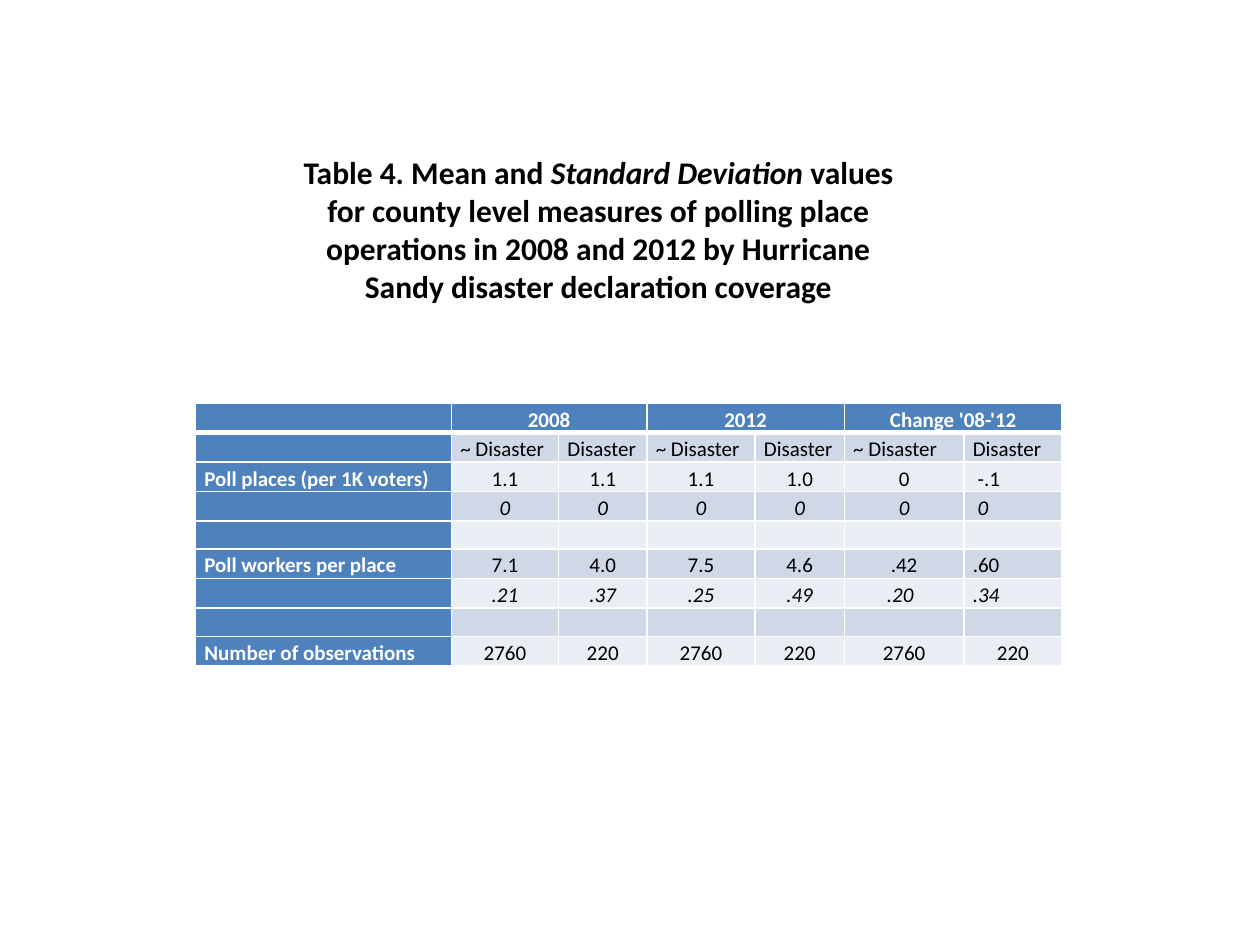
from dataclasses import dataclass

from lxml.etree import SubElement
from pptx import Presentation
from pptx.dml.color import RGBColor
from pptx.enum.text import MSO_ANCHOR as Anchor, MSO_AUTO_SIZE as AutoSize, PP_ALIGN as Align
from pptx.oxml.ns import qn
from pptx.util import Cm, Pt


@dataclass(frozen=True)
class Theme:
    font: str = "Calibri"
    title_size: int = 18
    table_size: int = 12
    ink: str = "000000"
    paper: str = "FFFFFF"
    accent: str = "4F81BD"
    bands: tuple = ("E9EDF4", "D0D8E8")
    rule: int = 1
    heavy_rule: int = 3


THEME = Theme()

TITLE = (
    ("Table 4. Mean and ", False),
    ("Standard Deviation", True),
    (" values for county level measures of polling place operations in 2008 "
     "and 2012 by Hurricane Sandy disaster declaration coverage", False),
)
ROWS = (
    ("", "2008", "", "2012", "", "Change '08-'12", ""),
    ("",) + ("~ Disaster", "Disaster") * 3,
    ("Poll places (per 1K voters)", "1.1", "1.1", "1.1", "1.0", "0", "-.1"),
    ("", "0", "0", "0", "0", "0", "0"),
    ("",) * 7,
    ("Poll workers per place", "7.1", "4.0", "7.5", "4.6", ".42", ".60"),
    ("", ".21", ".37", ".25", ".49", ".20", ".34"),
    ("",) * 7,
    ("Number of observations",) + ("2760", "220") * 3,
)
COLUMN_WIDTHS = (5.16, 2.16, 1.78, 2.18, 1.8, 2.41, 1.98)
ROW_HEIGHTS = (0.56,) * 6 + (0.58,) * 3
HEADER, SUBHEADER = 0, 1
DEVIATION_ROWS = (3, 6)
# Left-aligned figures and their indents in cm, by (row, column)
INDENTS = {(2, 6): 0.1, (3, 6): 0.1, (5, 6): 0, (6, 5): 0.68, (6, 6): 0}


def apply(target, **values):
    for name, value in values.items():
        setattr(target, name, value)


def add_run(paragraph, text, size, color, bold, italic):
    run = paragraph.add_run()
    run.text = text
    apply(run.font, name=THEME.font, size=Pt(size), bold=bold, italic=italic)
    run.font.color.rgb = RGBColor.from_string(color)


def add_title(slide, left, top, width, height):
    frame = slide.shapes.add_textbox(Cm(left), Cm(top), Cm(width), Cm(height)).text_frame
    apply(frame, word_wrap=True, auto_size=AutoSize.SHAPE_TO_FIT_TEXT)
    paragraph = frame.paragraphs[0]
    paragraph.alignment = Align.CENTER
    for text, italic in TITLE:
        add_run(paragraph, text, THEME.title_size, THEME.ink, True, italic)


def draw_borders(cell, row):
    """Rule all four sides, with a heavy rule between header and subheader."""
    properties = cell._tc.get_or_add_tcPr()
    heavy_side = {HEADER: "B", SUBHEADER: "T"}.get(row)
    for side in "LRTB":
        weight = THEME.heavy_rule if side == heavy_side else THEME.rule
        line = SubElement(properties, qn(f"a:ln{side}"), w=str(Pt(weight)))
        fill = SubElement(line, qn("a:solidFill"))
        SubElement(fill, qn("a:srgbClr"), val=THEME.paper)


def write_cell(cell, row, column, text):
    accented = row == HEADER or column == 0
    draw_borders(cell, row)
    cell.fill.solid()
    cell.fill.fore_color.rgb = RGBColor.from_string(
        THEME.accent if accented else THEME.bands[row % 2])
    apply(cell, margin_left=Cm(0.18), margin_right=Cm(0.18), margin_top=0, margin_bottom=0,
          vertical_anchor=Anchor.BOTTOM if row <= SUBHEADER else Anchor.MIDDLE)

    paragraph = cell.text_frame.paragraphs[0]
    indent = INDENTS.get((row, column))
    flush_left = row == SUBHEADER or column == 0 or indent is not None
    apply(paragraph, line_spacing=1.15, alignment=Align.LEFT if flush_left else Align.CENTER)
    if indent:
        paragraph._p.get_or_add_pPr().set("marL", str(Cm(indent)))
    if text:
        add_run(paragraph, text, THEME.table_size, THEME.paper if accented else THEME.ink,
                accented, row in DEVIATION_ROWS)
    else:
        # Keeps an empty row as low as a row of text
        SubElement(paragraph._p, qn("a:endParaRPr"), sz=str(THEME.table_size * 100))


def add_statistics(slide, left, top):
    table = slide.shapes.add_table(
        len(ROWS), len(COLUMN_WIDTHS), Cm(left), Cm(top),
        Cm(sum(COLUMN_WIDTHS)), Cm(sum(ROW_HEIGHTS))).table
    apply(table, first_row=False, horz_banding=False)
    for column, width in zip(table.columns, COLUMN_WIDTHS):
        column.width = Cm(width)
    for row, height in zip(table.rows, ROW_HEIGHTS):
        row.height = Cm(height)
    for row, texts in enumerate(ROWS):
        for column, text in enumerate(texts):
            write_cell(table.cell(row, column), row, column, text)
    for column in range(1, len(COLUMN_WIDTHS), 2):
        table.cell(HEADER, column).merge(table.cell(HEADER, column + 1))


def main():
    deck = Presentation()
    apply(deck, slide_width=Cm(25.4), slide_height=Cm(19.05))
    slide = deck.slides.add_slide(deck.slide_layouts[6])
    add_statistics(slide, 3.94, 8.13)
    add_title(slide, 5.5, 2.97, 13.13, 4.11)
    deck.save("out.pptx")


if __name__ == "__main__":
    main()
